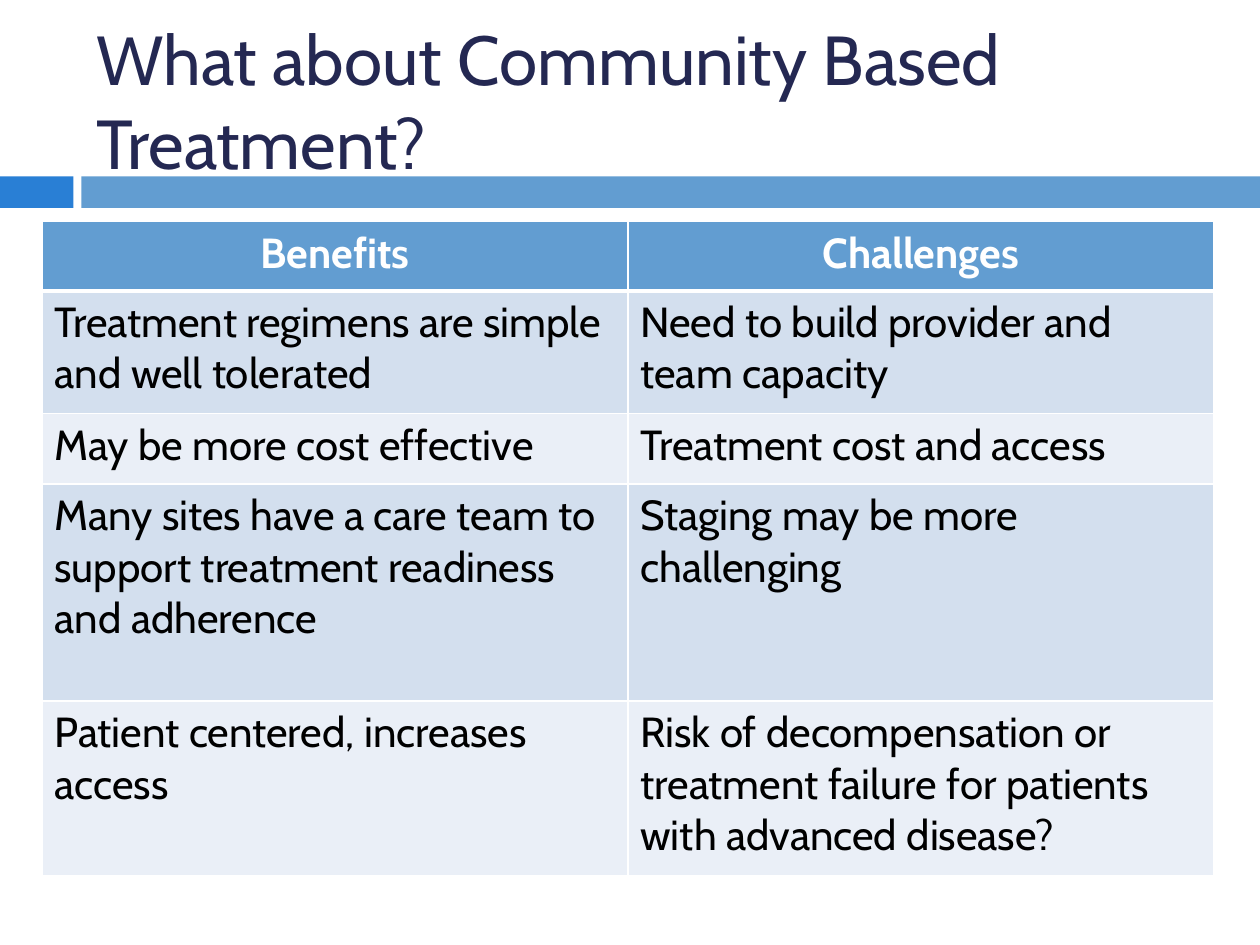
"""Build the slide on benefits and challenges of community based treatment."""
from typing import NamedTuple

from lxml.etree import SubElement
from pptx import Presentation
from pptx.dml.color import RGBColor
from pptx.enum.shapes import MSO_SHAPE as Preset
from pptx.enum.text import MSO_ANCHOR as Anchor, PP_ALIGN as Align
from pptx.oxml.ns import qn
from pptx.util import Pt

NAVY = RGBColor(0x24, 0x28, 0x52)
BLUE = RGBColor(0x29, 0x7F, 0xD5)
LIGHT_BLUE = RGBColor(0x62, 0x9D, 0xD1)
BAND_DARK = RGBColor(0xD3, 0xDF, 0xEE)
BAND_LIGHT = RGBColor(0xEA, 0xEF, 0xF7)
WHITE = RGBColor(0xFF, 0xFF, 0xFF)
BLACK = RGBColor(0x00, 0x00, 0x00)

TITLE_FORMAT = {"name": "Cabin", "size": Pt(39.6), "bold": False}
HEADER_FORMAT = {"name": "Cabin", "size": Pt(24), "bold": True}
BODY_FORMAT = {"name": "Cabin", "size": Pt(24), "bold": False}


class Bar(NamedTuple):
    left: float
    width: float
    color: RGBColor


class Row(NamedTuple):
    height: float
    benefit: str
    challenge: str


BARS = [Bar(0, 42, BLUE), Bar(46.5, 673.5, LIGHT_BLUE)]
ROWS = [
    Row(39.5, "Benefits", "Challenges"),
    Row(70, "Treatment regimens are simple and well tolerated",
        "Need to build provider and team capacity"),
    Row(40.5, "May be more cost effective", "Treatment cost and access"),
    Row(124, "Many sites have a care team to support treatment readiness and adherence",
        "Staging may be more challenging"),
    Row(100, "Patient centered, increases access",
        "Risk of decompensation or treatment failure for patients with advanced disease?"),
]


def write(text_frame, text: str, color: RGBColor, font_format: dict, align=Align.LEFT) -> None:
    """Put one formatted run in the first paragraph."""
    paragraph = text_frame.paragraphs[0]
    paragraph.alignment = align
    run = paragraph.add_run()
    run.text = text
    for name, value in font_format.items():
        setattr(run.font, name, value)
    run.font.color.rgb = color


def add_bar(slide, bar: Bar) -> None:
    """Draw one part of the band under the title."""
    shape = slide.shapes.add_shape(Preset.RECTANGLE, Pt(bar.left), Pt(100.8), Pt(bar.width), Pt(18))
    shape.shadow.inherit = False
    shape.fill.solid()
    shape.fill.fore_color.rgb = bar.color
    shape.line.fill.background()


def add_title(slide, text: str) -> None:
    """Add the wrapped slide title."""
    text_frame = slide.shapes.add_textbox(Pt(48), Pt(18), Pt(642), Pt(78)).text_frame
    text_frame.word_wrap = True
    text_frame.vertical_anchor = Anchor.MIDDLE
    write(text_frame, text, NAVY, TITLE_FORMAT)


def set_borders(cell, widths: dict[str, float]) -> None:
    """Give the cell white borders of the given widths."""
    properties = cell._tc.get_or_add_tcPr()
    for side, width in widths.items():
        line = SubElement(properties, qn(f"a:ln{side}"), w=str(Pt(width)))
        fill = SubElement(line, qn("a:solidFill"))
        SubElement(fill, qn("a:srgbClr"), val=str(WHITE))


def add_comparison(slide, rows: list[Row]) -> None:
    """Add the two-column table with a header and banded rows."""
    height = sum(row.height for row in rows)
    table = slide.shapes.add_table(len(rows), 2, Pt(24), Pt(126.7), Pt(669.6), Pt(height)).table
    for index, row in enumerate(rows):
        table.rows[index].height = Pt(row.height)
        header = index == 0
        band = LIGHT_BLUE if header else (BAND_LIGHT, BAND_DARK)[index % 2]
        widths = {"L": 1, "R": 1, "T": 3 if index == 1 else 1, "B": 3 if header else 1}
        for column, text in enumerate((row.benefit, row.challenge)):
            cell = table.cell(index, column)
            set_borders(cell, widths)
            cell.fill.solid()
            cell.fill.fore_color.rgb = band
            if header:
                write(cell.text_frame, text, WHITE, HEADER_FORMAT, Align.CENTER)
            else:
                write(cell.text_frame, text, BLACK, BODY_FORMAT)


def main() -> None:
    """Assemble and save the presentation."""
    presentation = Presentation()
    presentation.slide_width, presentation.slide_height = Pt(720), Pt(540)
    slide = presentation.slides.add_slide(presentation.slide_layouts[6])
    for bar in BARS:
        add_bar(slide, bar)
    add_title(slide, "What about Community Based Treatment?")
    add_comparison(slide, ROWS)
    presentation.save("out.pptx")


if __name__ == "__main__":
    main()
